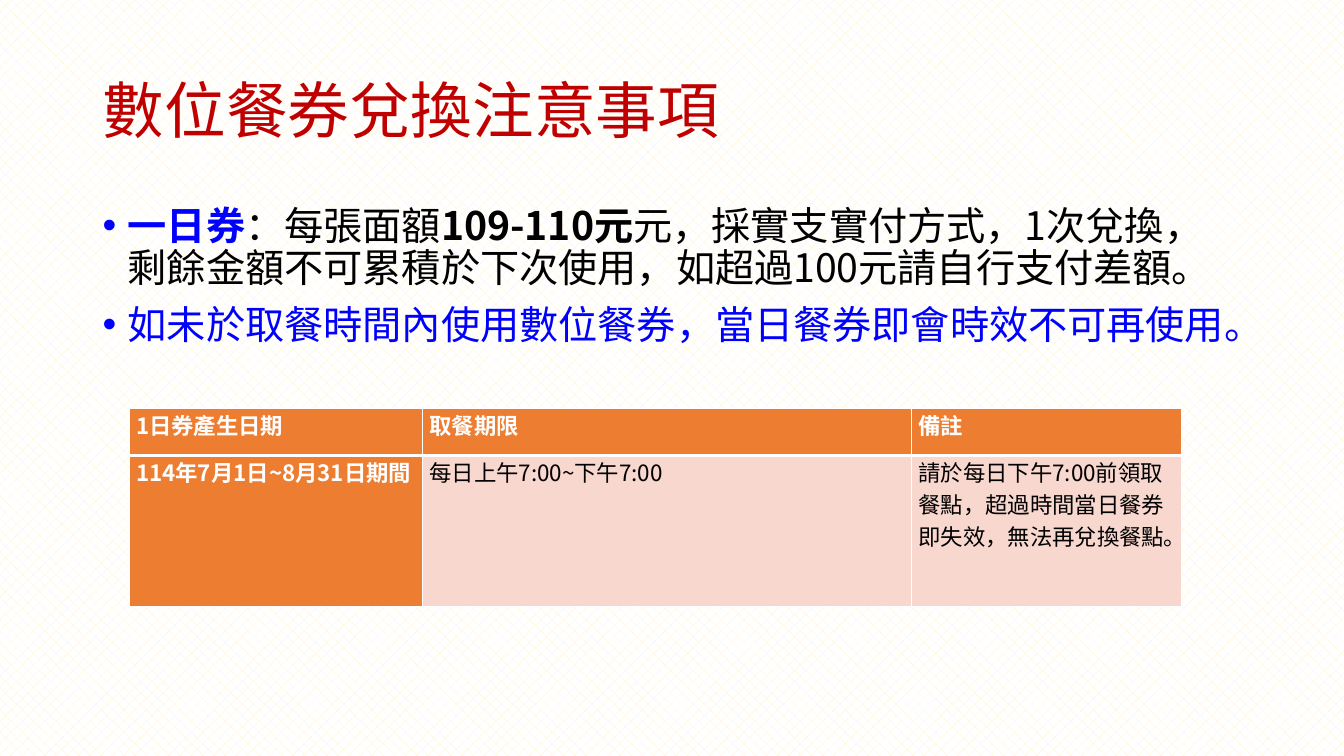
from lxml import etree
from pptx import Presentation
from pptx.dml.color import RGBColor
from pptx.enum.dml import MSO_PATTERN
from pptx.enum.text import MSO_ANCHOR, PP_ALIGN
from pptx.oxml import parse_xml
from pptx.oxml.ns import nsdecls, qn
from pptx.util import Inches, Pt

PATTERN = MSO_PATTERN.PERCENT_25
MIDDLE, TOP = MSO_ANCHOR.MIDDLE, MSO_ANCHOR.TOP
LEFT = PP_ALIGN.LEFT
FONT = "Noto Sans CJK SC"
WHITE = RGBColor(0xFF, 0xFF, 0xFF)
BLACK = RGBColor(0, 0, 0)
CREAM = RGBColor(0xFF, 0xF2, 0xCC)
RED = RGBColor(0xC0, 0, 0)
BLUE = RGBColor(0, 0, 0xFF)
ORANGE = RGBColor(0xED, 0x7D, 0x31)
PINK = RGBColor(0xF8, 0xD7, 0xCE)


def style_run(r, size, color, bold=False):
    r.font.size = Pt(size)
    r.font.bold = bold
    r.font.color.rgb = color
    r.font.name = FONT
    etree.SubElement(r.font._element, qn("a:ea")).set("typeface", FONT)


def set_borders(cell, widths):
    for i, (side, width) in enumerate(widths.items()):
        cell._tc.get_or_add_tcPr().insert(i, parse_xml(
            f'<a:ln{side} {nsdecls("a")} w="{Pt(width)}"><a:solidFill>'
            f'<a:srgbClr val="{WHITE}"/></a:solidFill></a:ln{side}>'))


prs = Presentation()
prs.slide_width, prs.slide_height = Inches(13.33), Inches(7.5)
s = prs.slides.add_slide(prs.slide_layouts[5])

# Background
fill = s.background.fill
fill.patterned()
fill.pattern = PATTERN
fill.fore_color.rgb = CREAM
fill.back_color.rgb = WHITE

# Title
title = s.shapes.title
title.left, title.top = Inches(0.92), Inches(0.4)
title.width, title.height = Inches(11.5), Inches(1.45)
tf = title.text_frame
tf.text = "數位餐券兌換注意事項"
tf.vertical_anchor = MIDDLE
p = tf.paragraphs[0]
p.alignment = LEFT
p.line_spacing = 0.9
style_run(p.runs[0], 44, RED)

# Bulleted notes
notes = [
    [("一日券", BLUE, True), ("：每張面額", BLACK, False), ("109-110元", BLACK, True),
     ("元，採實支實付方式，1次兌換，剩餘金額不可累積於下次使用，"
      "如超過100元請自行支付差額。", BLACK, False)],
    [("如未於取餐時間內使用數位餐券，當日餐券即會時效不可再使用。", BLUE, False)],
]
tf = s.shapes.add_textbox(Inches(0.92), Inches(2), Inches(11.5), Inches(4.76)).text_frame
tf.word_wrap = True
for i, note in enumerate(notes):
    p = tf.add_paragraph() if i else tf.paragraphs[0]
    p.line_spacing = 0.9
    p.space_before = Pt(10)
    pPr = p._p.get_or_add_pPr()
    pPr.set("marL", str(Inches(0.25)))
    pPr.set("indent", str(-Inches(0.25)))
    etree.SubElement(pPr, qn("a:buFont")).set("typeface", "Arial")
    etree.SubElement(pPr, qn("a:buChar")).set("char", "•")
    for text, color, bold in note:
        r = p.add_run()
        r.text = text
        style_run(r, 28, color, bold)

# Voucher table: header row and first column are emphasised
rows = [
    ["1日券產生日期", "取餐期限", "備註"],
    ["114年7月1日~8月31日期間", "每日上午7:00~下午7:00",
     "請於每日下午7:00前領取餐點，超過時間當日餐券即失效，無法再兌換餐點。"],
]
table = s.shapes.add_table(2, 3, Inches(1.28), Inches(4.05),
                           Inches(10.44), Inches(1.97)).table
for col, width in zip(table.columns, (2.91, 4.85, 2.68)):
    col.width = Inches(width)
for row, height in zip(table.rows, (0.47, 1.5)):
    row.height = Inches(height)
for i, row in enumerate(rows):
    for j, text in enumerate(row):
        cell = table.cell(i, j)
        heading = i == 0 or j == 0
        cell.text = text
        cell.vertical_anchor = TOP
        cell.margin_left = cell.margin_right = Inches(0.07)
        cell.margin_top = cell.margin_bottom = 0
        cell.fill.solid()
        cell.fill.fore_color.rgb = ORANGE if heading else PINK
        style_run(cell.text_frame.paragraphs[0].runs[0], 16,
                  WHITE if heading else BLACK, heading)
        set_borders(cell, {"L": 1, "R": 1, "T": 3 if i else 1, "B": 1 if i else 3})

prs.save("out.pptx")
